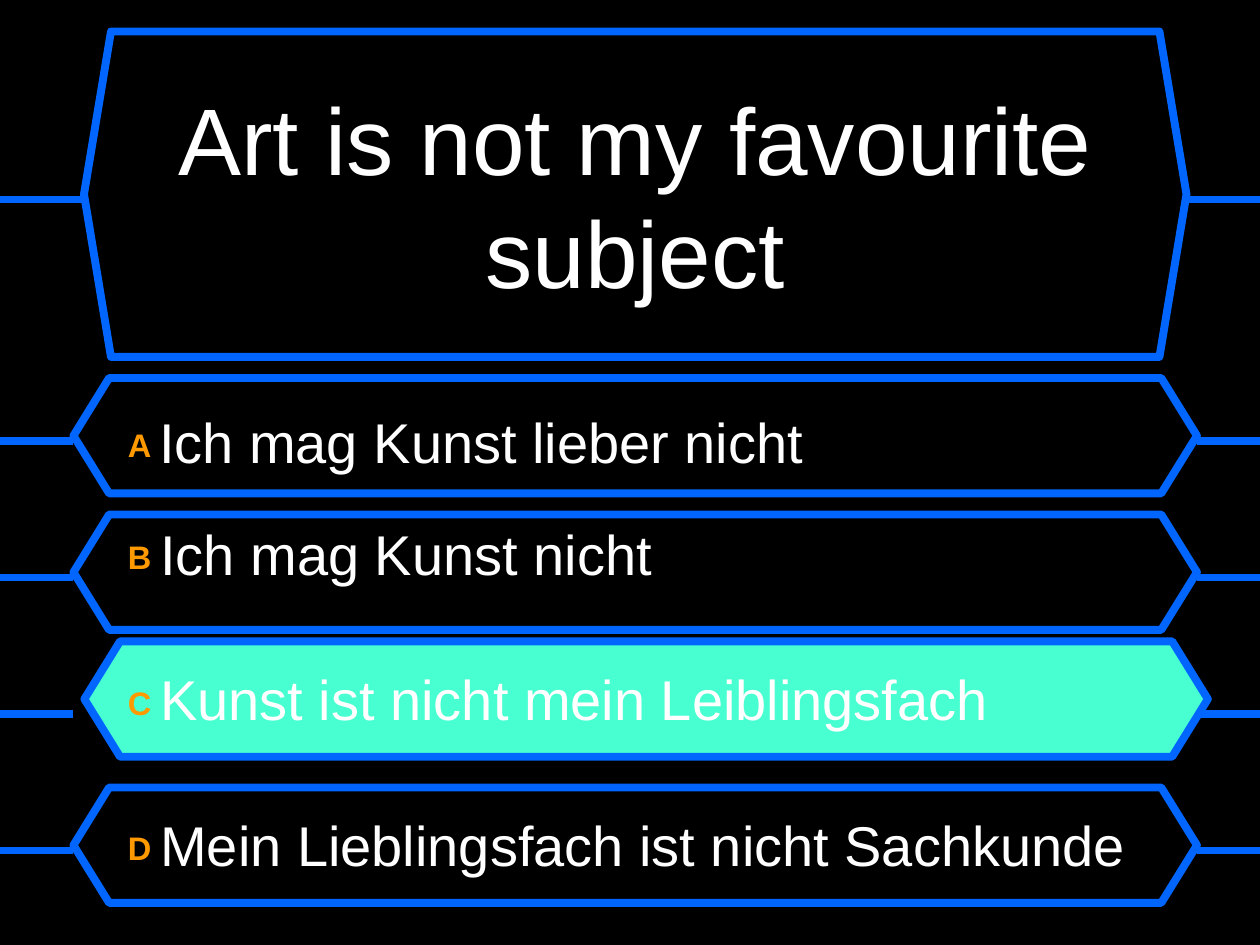
from dataclasses import dataclass

from lxml import etree
from pptx import Presentation
from pptx.dml.color import RGBColor
from pptx.enum.shapes import MSO_CONNECTOR, MSO_SHAPE
from pptx.enum.text import MSO_ANCHOR, PP_ALIGN
from pptx.oxml.ns import qn
from pptx.util import Pt

HEXAGON = MSO_SHAPE.HEXAGON
STRAIGHT = MSO_CONNECTOR.STRAIGHT
TOP, MIDDLE = MSO_ANCHOR.TOP, MSO_ANCHOR.MIDDLE
LEFT, CENTER = PP_ALIGN.LEFT, PP_ALIGN.CENTER

SLIDE_W, SLIDE_H = 720, 540
BLACK, WHITE, BLUE, ORANGE, MINT = "000000", "FFFFFF", "0066FF", "FF9900", "47FFD1"
FRAME_W = 4.5
ROW_TOP, ROW_STEP, ROW_H = 216, 78, 66


@dataclass
class Answer:
    """One answer row with its text and frame settings."""
    letter: str
    text: str
    spacing: float
    fill: str = BLACK
    dx: float = 0
    dy: float = 0


ANSWERS = [
    Answer("A", "Ich mag Kunst lieber nicht", 1.5),
    Answer("B", "Ich mag Kunst nicht", 1.5),
    Answer("C", "Kunst ist nicht mein Leiblingsfach", 2, MINT, 6.25, -5.5),
    Answer("D", "Mein Lieblingsfach ist nicht Sachkunde", 2),
]


def rgb(value: str) -> RGBColor:
    """Turn a hex string into a colour."""
    return RGBColor.from_string(value)


def add_frame(s, x: float, y: float, w: float, h: float, adj: float, fill: str = BLACK):
    """Draw a blue-edged hexagon."""
    sp = s.shapes.add_shape(HEXAGON, Pt(x), Pt(y), Pt(w), Pt(h))
    sp.shadow.inherit = False
    sp.adjustments[0] = adj
    sp.fill.solid()
    sp.fill.fore_color.rgb = rgb(fill)
    sp.line.color.rgb = rgb(BLUE)
    sp.line.width = Pt(FRAME_W)


def add_side_lines(s, left: float, right: float, y: float):
    """Join a frame to both slide edges."""
    for x1, x2 in ((left, 0), (SLIDE_W, right)):
        cx = s.shapes.add_connector(STRAIGHT, Pt(x1), Pt(y), Pt(x2), Pt(y))
        cx.line.color.rgb = rgb(BLUE)
        cx.line.width = Pt(FRAME_W)
        etree.SubElement(cx._element.spPr, qn("a:effectLst"))


def add_text_box(s, x: float, y: float, w: float, h: float, anchor):
    """Add a wrapping text box and return its text frame."""
    tf = s.shapes.add_textbox(Pt(x), Pt(y), Pt(w), Pt(h)).text_frame
    tf.word_wrap = True
    tf.vertical_anchor = anchor
    return tf


def add_run(p, text: str, *, size: float, color: str = WHITE, bold: bool = False,
            baseline: int = 0):
    """Append a formatted run; baseline is a percentage."""
    r = p.add_run()
    r.text = text
    r.font.name = "Arial"
    r.font.size = Pt(size)
    r.font.bold = bold
    r.font.color.rgb = rgb(color)
    if baseline:
        r.font._element.set("baseline", str(baseline * 1000))


def format_answer(p, spacing: float):
    """Set hanging indent, line spacing and 20 % space before."""
    p.alignment = LEFT
    p.line_spacing = spacing
    p.space_before = Pt(0)
    pPr = p._p.get_or_add_pPr()
    pPr.set("marL", str(Pt(27)))
    pPr.set("indent", str(Pt(-27)))
    before = pPr.find(qn("a:spcBef"))
    before.remove(before[0])
    etree.SubElement(before, qn("a:spcPct"), val="20000")


def main():
    """Build the quiz slide."""
    prs = Presentation()
    prs.slide_width, prs.slide_height = Pt(SLIDE_W), Pt(SLIDE_H)
    s = prs.slides.add_slide(prs.slide_layouts[6])
    s.background.fill.solid()
    s.background.fill.fore_color.rgb = rgb(BLACK)

    add_frame(s, 48, 18, 630, 186, 0.083)
    for i, answer in enumerate(ANSWERS):
        y = ROW_TOP + i * ROW_STEP + answer.dy
        add_frame(s, 42 + answer.dx, y, 642, ROW_H, 0.309, answer.fill)

    p = add_text_box(s, 60, 30, 606, 162, MIDDLE).paragraphs[0]
    p.alignment = CENTER
    add_run(p, "Art is not my favourite subject", size=54)

    tf = add_text_box(s, 66, 210, 600, 312, TOP)
    for i, answer in enumerate(ANSWERS):
        p = tf.add_paragraph() if i else tf.paragraphs[0]
        format_answer(p, answer.spacing)
        add_run(p, answer.letter + " ", size=32, color=ORANGE, bold=True, baseline=10)
        add_run(p, answer.text, size=32)

    add_side_lines(s, 48, 678, 114)
    for i in range(len(ANSWERS)):
        add_side_lines(s, 42, 684, ROW_TOP + 36 + i * ROW_STEP)

    prs.save("out.pptx")


if __name__ == "__main__":
    main()
